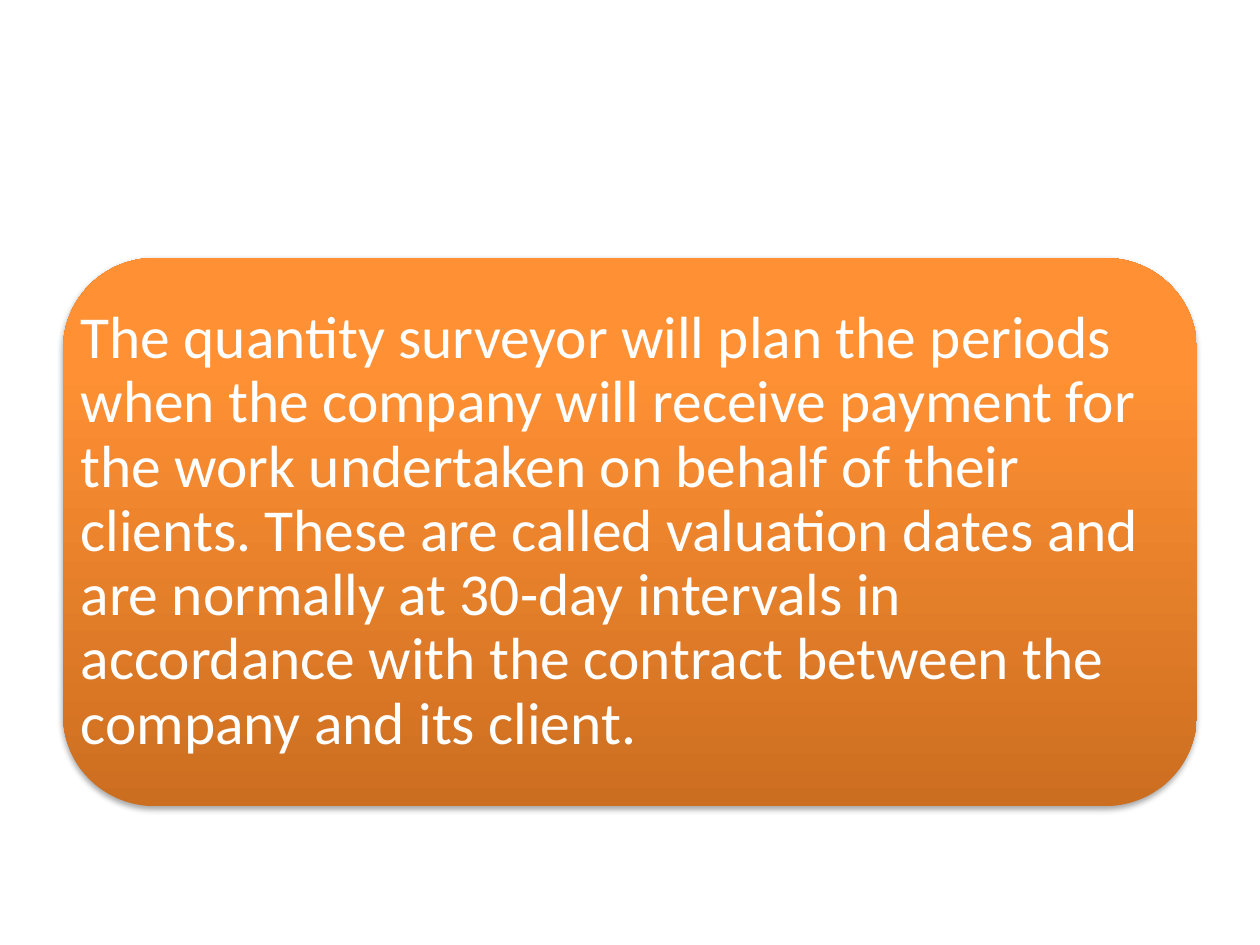
import copy

import lxml.etree
import pptx
import pptx.dml.color
import pptx.enum.shapes
import pptx.enum.text
import pptx.oxml.ns
import pptx.util

COLOURS = {"dark": "CC6E20", "bright": "FF9034", "top": "FF9136", "text": "FFFFFF", "shadow": "000000"}
FONT = "Calibri"
WIDTH, HEIGHT = pptx.util.Inches(10), pptx.util.Inches(7.5)
PANEL = (0.05, 0.273, 0.9, 0.58)
STATEMENT = (
    "The quantity surveyor will plan the periods when the company will receive payment "
    "for the work undertaken on behalf of their clients. These are called valuation dates "
    "and are normally at 30-day intervals in accordance with the contract between the "
    "company and its client."
)


def place(shares):
    return [int(share * size) for share, size in zip(shares, (WIDTH, HEIGHT) * 2)]


def fill_gradient(shape, stops):
    shape.fill.gradient()
    shape.fill.gradient_angle = 90
    first = shape.fill.gradient_stops[0]
    stop_list = shape._element.spPr.find(".//" + pptx.oxml.ns.qn("a:gsLst"))
    stop_list.insert(1, copy.deepcopy(stop_list[0]))
    for stop, (position, colour) in zip(shape.fill.gradient_stops, stops):
        stop.position = position
        stop.color.rgb = pptx.dml.color.RGBColor.from_string(COLOURS[colour])


def add_shadow(shape, opacity, blur, distance):
    qn = pptx.oxml.ns.qn
    shape.shadow.inherit = False
    effects = shape._element.spPr.find(qn("a:effectLst"))
    shadow = lxml.etree.SubElement(
        effects, qn("a:outerShdw"), blurRad=str(pptx.util.Pt(blur)),
        dist=str(pptx.util.Pt(distance)), dir="5400000", rotWithShape="0")
    colour = lxml.etree.SubElement(shadow, qn("a:srgbClr"), val=COLOURS["shadow"])
    lxml.etree.SubElement(colour, qn("a:alpha"), val=str(opacity * 1000))


def add_panel(slide, shares):
    shape = slide.shapes.add_shape(
        pptx.enum.shapes.MSO_SHAPE.ROUNDED_RECTANGLE, *place(shares))
    shape.line.fill.background()
    fill_gradient(shape, [(0, "dark"), (0.8, "bright"), (1, "top")])
    add_shadow(shape, 35, 3.1, 1.8)


def add_text(slide, shares, text):
    frame = slide.shapes.add_textbox(*place(shares)).text_frame
    frame.word_wrap = True
    frame.vertical_anchor = pptx.enum.text.MSO_ANCHOR.MIDDLE
    inset = pptx.util.Inches(0.14)
    frame.margin_left = frame.margin_right = inset
    frame.margin_top = frame.margin_bottom = inset
    paragraph = frame.paragraphs[0]
    paragraph.line_spacing = 0.9
    run = paragraph.add_run()
    run.text = text
    run.font.name = FONT
    run.font.size = pptx.util.Pt(34)
    run.font.color.rgb = pptx.dml.color.RGBColor.from_string(COLOURS["text"])


def main():
    presentation = pptx.Presentation()
    presentation.slide_width, presentation.slide_height = WIDTH, HEIGHT
    slide = presentation.slides.add_slide(presentation.slide_layouts[6])
    add_panel(slide, PANEL)
    add_text(slide, PANEL, STATEMENT)
    presentation.save("out.pptx")


if __name__ == "__main__":
    main()
